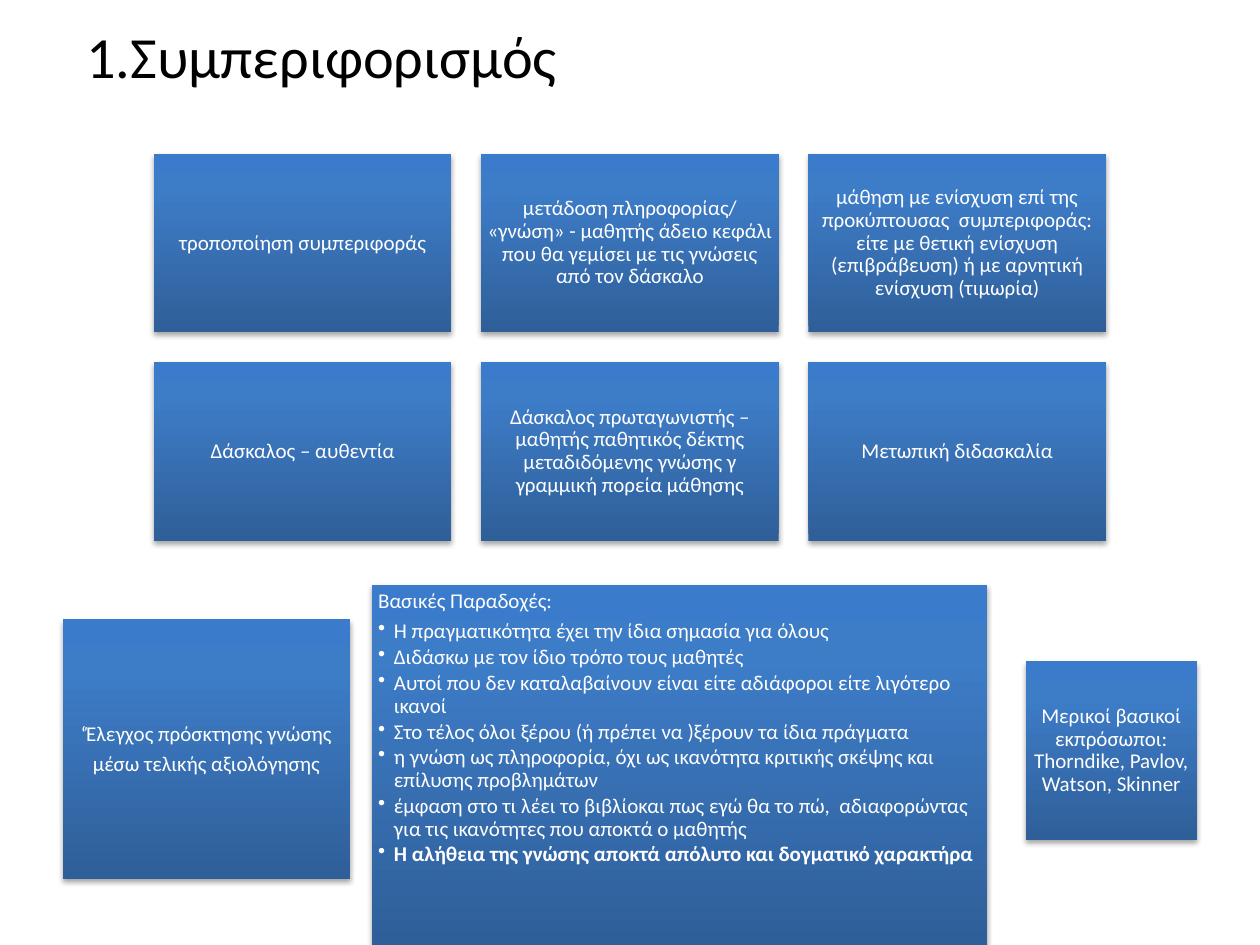
from lxml import etree
from pptx import Presentation
from pptx.dml.color import RGBColor
from pptx.enum import shapes, text
from pptx.oxml import ns
from pptx.util import Pt

COLORS = {"title": "000000", "text": "FFFFFF", "shadow": "000000",
          "dark": "2F5F99", "middle": "3D7CC7", "light": "3A7CCB"}
STOPS = [(0, "dark"), (80, "middle"), (100, "light")]


def add_card(page, left, top, width, height, lines):
    card = page.shapes.add_shape(shapes.MSO_SHAPE.RECTANGLE,
                                 Pt(left), Pt(top), Pt(width), Pt(height))
    card.line.fill.background()
    card.fill.gradient()
    card.fill.gradient_angle = 90
    properties = card.element.spPr
    stop_list = properties.find(".//" + ns.qn("a:gsLst"))
    for stop in list(stop_list):
        stop_list.remove(stop)
    for position, name in STOPS:
        stop = etree.SubElement(stop_list, ns.qn("a:gs"), pos=str(position * 1000))
        etree.SubElement(stop, ns.qn("a:srgbClr"), val=COLORS[name])
    card.shadow.inherit = False
    shadow = etree.SubElement(properties.find(ns.qn("a:effectLst")), ns.qn("a:outerShdw"),
                              blurRad=str(Pt(3.1)), dist=str(Pt(1.8)),
                              dir="5400000", rotWithShape="0")
    shade = etree.SubElement(shadow, ns.qn("a:srgbClr"), val=COLORS["shadow"])
    etree.SubElement(shade, ns.qn("a:alpha"), val="35000")

    frame = card.text_frame
    frame.word_wrap = True
    frame.vertical_anchor = text.MSO_ANCHOR.MIDDLE
    frame.margin_left = frame.margin_right = Pt(3.6)
    frame.margin_top = frame.margin_bottom = Pt(3.6)
    frame.text = "\n".join(lines)
    for para in frame.paragraphs:
        para.alignment = text.PP_ALIGN.CENTER
        para.space_after = Pt(4.2)
        style_para(para, 12, "text")
    return frame


def style_para(para, size, color):
    para.line_spacing = 0.9
    for span in para.runs:
        span.font.name = "Calibri"
        span.font.size = Pt(size)
        span.font.color.rgb = RGBColor.from_string(COLORS[color])


deck = Presentation()
deck.slide_width, deck.slide_height = Pt(720), Pt(540)
page = deck.slides.add_slide(deck.slide_layouts[6])

title = page.shapes.add_textbox(Pt(36), Pt(16), Pt(296), Pt(61)).text_frame
title.word_wrap = True
title.margin_top = 0
title.text = "1.Συμπεριφορισμός"
title.paragraphs[0].alignment = text.PP_ALIGN.CENTER
style_para(title.paragraphs[0], 33.3, "title")

ideas = [
    "τροποποίηση συμπεριφοράς",
    "μετάδοση πληροφορίας/ «γνώση» - μαθητής άδειο κεφάλι που θα γεμίσει με τις "
    "γνώσεις από τον δάσκαλο",
    "μάθηση με ενίσχυση επί της προκύπτουσας  συμπεριφοράς: είτε με θετική ενίσχυση "
    "(επιβράβευση) ή με αρνητική ενίσχυση (τιμωρία)",
    "Δάσκαλος – αυθεντία",
    "Δάσκαλος πρωταγωνιστής –μαθητής παθητικός δέκτης μεταδιδόμενης γνώσης γ "
    "γραμμική πορεία μάθησης",
    "Μετωπική διδασκαλία",
]
card_width, card_height, gap = 170, 102, 17
for index, idea in enumerate(ideas):
    row, column = divmod(index, 3)
    add_card(page, 88 + column * (card_width + gap), 88 + row * (card_height + gap),
             card_width, card_height, [idea])

add_card(page, 36, 354, 164, 148.5,
         ["‘Έλεγχος πρόσκτησης γνώσης", "μέσω τελικής αξιολόγησης"])

assumptions = add_card(page, 212.5, 334, 351.5, 206, [
    "Βασικές Παραδοχές:",
    "Η πραγματικότητα έχει την ίδια σημασία για όλους",
    "Διδάσκω με τον ίδιο τρόπο τους μαθητές",
    "Αυτοί που δεν καταλαβαίνουν είναι είτε αδιάφοροι είτε λιγότερο ικανοί",
    "Στο τέλος όλοι ξέρου (ή πρέπει να )ξέρουν τα ίδια πράγματα",
    "η γνώση ως πληροφορία, όχι ως ικανότητα κριτικής σκέψης και επίλυσης προβλημάτων",
    "έμφαση στο τι λέει το βιβλίοκαι πως εγώ θα το πώ,  αδιαφορώντας για τις ικανότητες "
    "που αποκτά ο μαθητής",
    "Η αλήθεια της γνώσης αποκτά απόλυτο και δογματικό χαρακτήρα",
])
assumptions.vertical_anchor = text.MSO_ANCHOR.TOP
for para in assumptions.paragraphs:
    para.alignment = text.PP_ALIGN.LEFT
for para in assumptions.paragraphs[1:]:
    para.level = 1
    para.space_after = Pt(1.8)
    layout = para._p.get_or_add_pPr()
    layout.set("marL", str(Pt(9)))
    layout.set("indent", str(Pt(-9)))
    etree.SubElement(layout, ns.qn("a:buChar"), char="•")
assumptions.paragraphs[-1].runs[0].font.bold = True

add_card(page, 586, 378, 98, card_height,
         ["Μερικοί βασικοί εκπρόσωποι: Thorndike, Pavlov, Watson, Skinner"])

deck.save("out.pptx")
